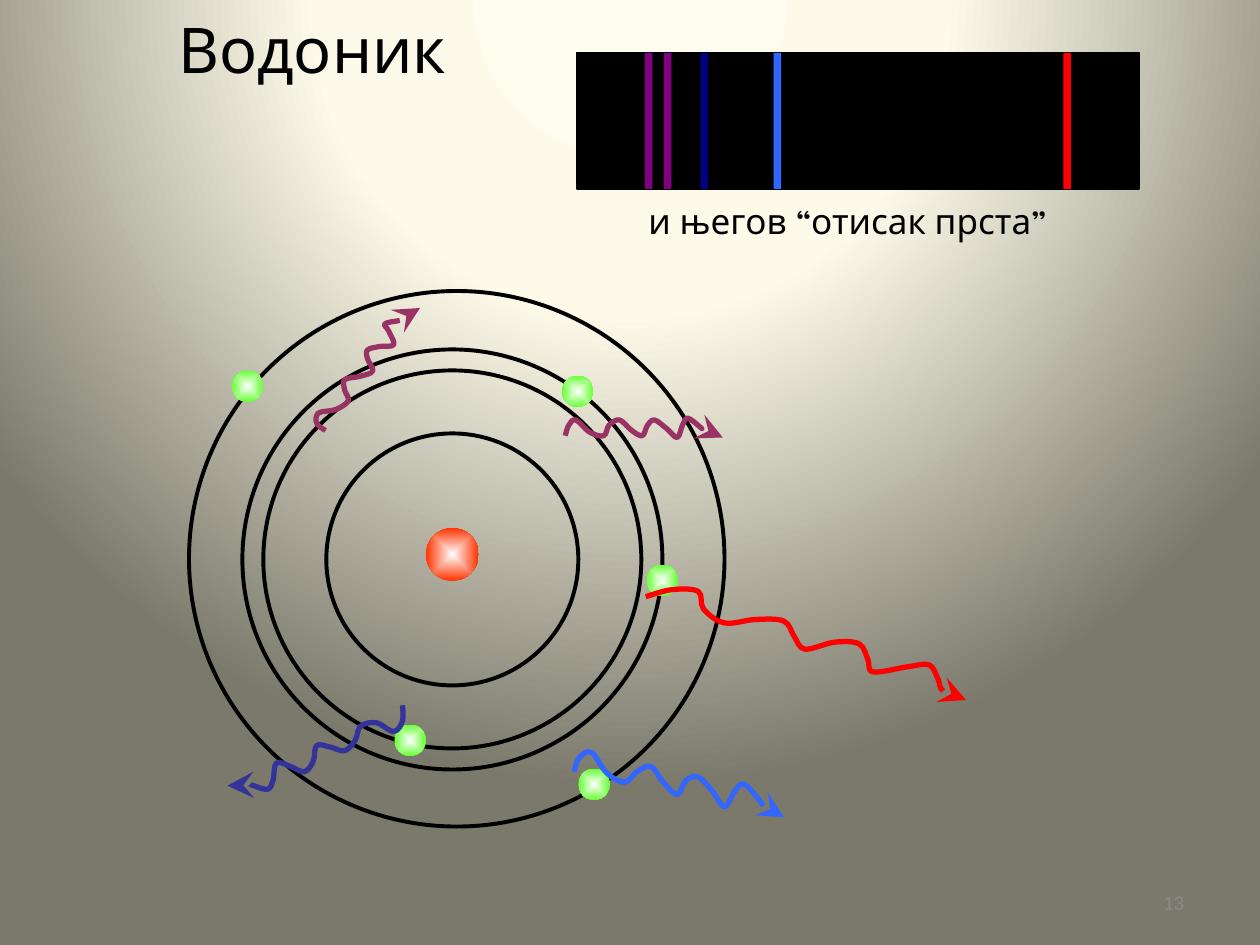
from lxml import etree
from pptx import Presentation
from pptx.dml.color import RGBColor
from pptx.enum.shapes import MSO_SHAPE
from pptx.enum.text import MSO_ANCHOR, MSO_AUTO_SIZE, PP_ALIGN
from pptx.oxml import parse_xml
from pptx.oxml.ns import nsdecls, qn
from pptx.util import Pt

RECT, OVAL = MSO_SHAPE.RECTANGLE, MSO_SHAPE.OVAL
CENTER, RIGHT = PP_ALIGN.CENTER, PP_ALIGN.RIGHT
TOP, GROW = MSO_ANCHOR.TOP, MSO_AUTO_SIZE.SHAPE_TO_FIT_TEXT
FACE = "League Spartan"


def tint(color, code):
    color.rgb = RGBColor.from_string(code)


def write(shape, text, size, face=None, code="000000", align=CENTER):
    frame = shape.text_frame
    frame.text = text
    frame.word_wrap = True
    frame.auto_size = GROW
    frame.vertical_anchor = TOP
    frame.margin_left = frame.margin_right = 0
    frame.margin_top = frame.margin_bottom = 0
    para = frame.paragraphs[0]
    para.alignment = align
    para.font.size = Pt(size)
    para.font.name = face
    tint(para.font.color, code)


prs = Presentation()
prs.slide_width, prs.slide_height = Pt(720), Pt(540)
slide = prs.slides.add_slide(prs.slide_layouts[5])
shapes = slide.shapes

title = shapes.title
title.left, title.top, title.width, title.height = Pt(18), Pt(5.8), Pt(321), Pt(43)
write(title, "Водоник", 36, FACE)

slide.background.fill.solid()
back = slide.element.find(".//" + qn("p:bgPr"))
cream = [(0, "FEFCEE"), (40, "FDFAEA"), (100, "7B796B")]
glows = [(back, cream, "circle", -80, 180)]

band_top, band_high = 30.2, 77.8
bands = [
    (329.8, 321.1, "000000"),
    (368.6, 4.3, "800080"),
    (379.4, 4.3, "800080"),
    (400.3, 4.3, "000080"),
    (442.1, 4.3, "3366FF"),
    (607.7, 4.3, "FF0000"),
]
for left, wide, code in bands:
    band = shapes.add_shape(RECT, Pt(left), Pt(band_top), Pt(wide), Pt(band_high))
    band.shadow.inherit = False
    band.fill.solid()
    tint(band.fill.fore_color, code)
    if code == "000000":
        tint(band.line.color, code)
        band.line.width = Pt(0.75)
    else:
        band.line.fill.background()

label = shapes.add_textbox(Pt(324), Pt(113.8), Pt(321), Pt(24))
write(label, "и његов “отисак прста”", 20, FACE)

RED, GREEN = "FF3300", "66FF33"
discs = [
    (258.5, 316.8, 15.1, RED),
    (258.5, 319.7, 72, None),
    (258.5, 319.7, 108, None),
    (258.5, 319.7, 120, None),
    (261, 319.3, 153, None),
    (141.5, 220.7, 9, GREEN),
    (330.1, 223.6, 9, GREEN),
    (234.4, 423, 9, GREEN),
    (339.5, 448.2, 9, GREEN),
    (378.4, 331.6, 9, GREEN),
]
for x, y, r, code in discs:
    disc = shapes.add_shape(OVAL, Pt(x - r), Pt(y - r), Pt(2 * r), Pt(2 * r))
    disc.shadow.inherit = False
    if code:
        disc.fill.solid()
        disc.line.fill.background()
        glows.append((disc.element.spPr, [(0, "FFFFFF"), (100, code)], "shape", 50, 50))
    else:
        disc.fill.background()
        tint(disc.line.color, "000000")
        disc.line.width = Pt(2.25)

for props, stops, form, top, low in glows:
    marks = "".join(
        f'<a:gs pos="{at * 1000}"><a:srgbClr val="{code}"/></a:gs>' for at, code in stops
    )
    grad = parse_xml(
        f'<a:gradFill {nsdecls("a")} rotWithShape="1"><a:gsLst>{marks}</a:gsLst>'
        f'<a:path path="{form}"><a:fillToRect l="50000" t="{top * 1000}" '
        f'r="50000" b="{low * 1000}"/></a:path></a:gradFill>'
    )
    props.replace(props.find(qn("a:solidFill")), grad)

waves = [
    ("993366", [(186, 246), (181, 242), (182, 236), (192, 234), (199, 229), (197, 223),
                (197, 217), (206, 215), (213, 212), (210, 205), (210, 200), (217, 198),
                (225, 197), (222, 189), (220, 185), (229, 183), (235, 181), (240, 176)]),
    ("FF0000", [(369, 341), (384, 337), (399, 338), (402, 348), (414, 356), (432, 354),
                (448, 355), (454, 364), (460, 371), (477, 367), (491, 368), (496, 377),
                (499, 384), (519, 381), (531, 380), (536, 388), (539, 395), (552, 400)]),
    ("993366", [(323, 249), (325, 243), (329, 240), (337, 247), (345, 249), (348, 243),
                (354, 240), (361, 246), (367, 249), (370, 243), (374, 240), (381, 245),
                (387, 250), (390, 243), (393, 239), (400, 244), (405, 249), (413, 250)]),
    ("333399", [(230, 403), (230, 412), (225, 418), (215, 413), (206, 415), (203, 423),
                (197, 429), (189, 427), (181, 426), (179, 435), (174, 441), (166, 438),
                (158, 436), (156, 446), (153, 451), (145, 449), (138, 446), (130, 449)]),
    ("3366FF", [(328, 441), (331, 433), (338, 430), (347, 442), (357, 447), (364, 441),
                (372, 438), (379, 447), (387, 454), (392, 446), (399, 444), (407, 452),
                (414, 461), (420, 452), (425, 448), (433, 456), (439, 464), (448, 467)]),
]
for code, knots in waves:
    ends = [knots[0]] + knots
    dots = []
    for (ax, ay), (bx, by), (cx, cy), (dx, dy) in zip(ends, ends[1:], ends[2:], ends[3:]):
        dots += [(bx + (cx - ax) / 6, by + (cy - ay) / 6),
                 (cx - (dx - bx) / 6, cy - (dy - by) / 6), (cx, cy)]
    dots.append(knots[-1])
    pen = shapes.build_freeform(Pt(knots[0][0]), Pt(knots[0][1]))
    pen.add_line_segments([(Pt(x), Pt(y)) for x, y in dots], close=False)
    wave = pen.convert_to_shape()
    wave.shadow.inherit = False
    wave.fill.background()
    tint(wave.line.color, code)
    wave.line.width = Pt(3)
    trace = wave.element.find(".//" + qn("a:path"))
    steps = trace.findall(qn("a:lnTo"))[:-1]
    for first, *rest in zip(steps[::3], steps[1::3], steps[2::3]):
        first.tag = qn("a:cubicBezTo")
        for step in rest:
            first.append(step[0])
            trace.remove(step)
    stroke = wave.element.spPr.find(qn("a:ln"))
    etree.SubElement(stroke, qn("a:tailEnd"), type="stealth", w="lg", len="lg")

page = shapes.add_textbox(Pt(604), Pt(508.5), Pt(72.8), Pt(15))
write(page, "13", 12, code="898989", align=RIGHT)

prs.save("out.pptx")
